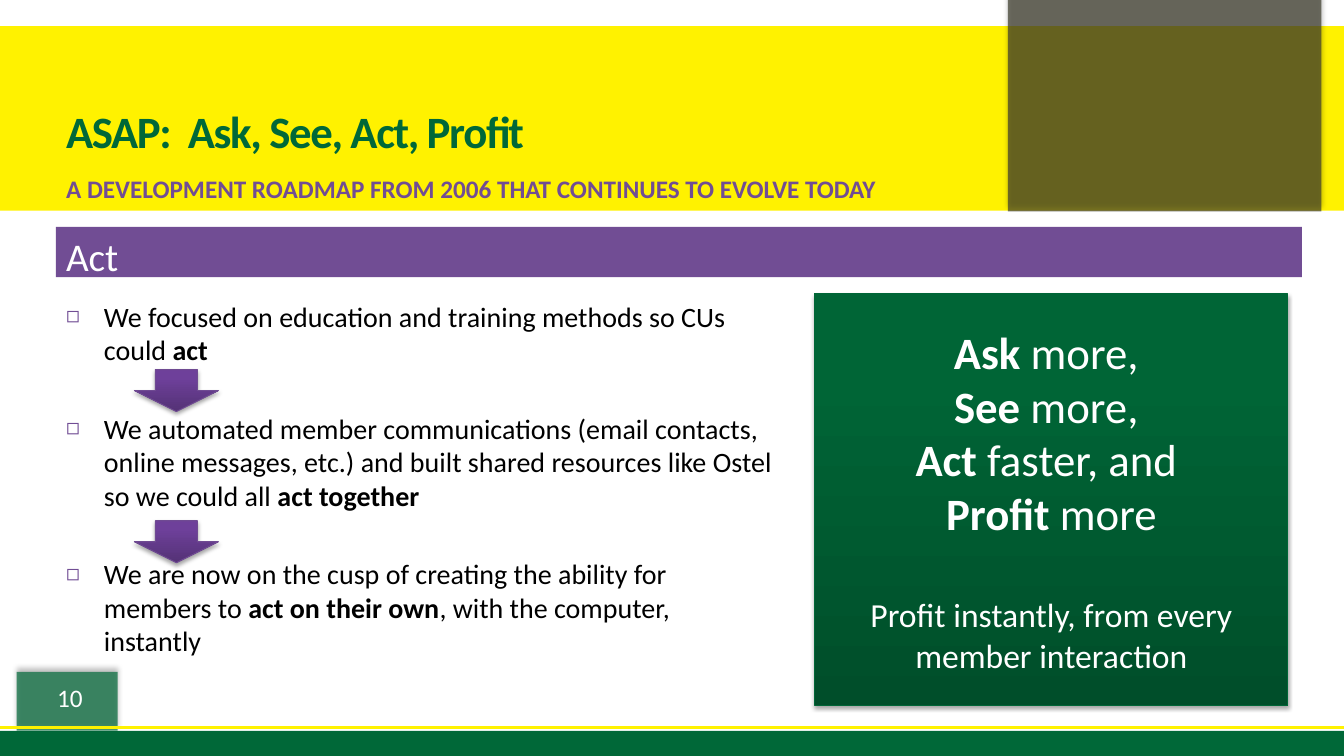
from lxml import etree
from pptx import Presentation
from pptx.dml.color import RGBColor
from pptx.enum.shapes import MSO_CONNECTOR, MSO_SHAPE
from pptx.enum.text import MSO_ANCHOR, MSO_AUTO_SIZE, PP_ALIGN
from pptx.oxml.ns import qn
from pptx.util import Pt

GREEN, YELLOW, PURPLE, WHITE = "006838", "FFF200", "714D94", "FFFFFF"
GREEN_STOPS = [(0, "004E2A"), (80, "006536"), (100, "006537")]
PURPLE_STOPS = [(0, "543276"), (80, "6E409A"), (100, "6E3F9C")]


def rgb(value):
    return RGBColor.from_string(value)


def add_xml(parent, tag, **attrs):
    return etree.SubElement(parent, qn(tag), attrs)


def add_color(parent, color, opacity=None):
    clr = add_xml(parent, "a:srgbClr", val=color)
    if opacity is not None:
        add_xml(clr, "a:alpha", val=str(opacity * 1000))


def add_shadow(s, blur, dist, angle):
    effects = s._element.spPr.find(qn("a:effectLst"))
    shadow = add_xml(effects, "a:outerShdw", blurRad=str(Pt(blur)),
                     dist=str(Pt(dist)), dir=str(angle * 60000),
                     algn="ctr", rotWithShape="0")
    add_color(shadow, "000000", 35)


def add_block(slide, box, color, kind=MSO_SHAPE.RECTANGLE):
    s = slide.shapes.add_shape(kind, *map(Pt, box))
    s.shadow.inherit = False
    s.fill.solid()
    s.fill.fore_color.rgb = rgb(color)
    s.line.fill.background()
    return s


def add_glass(slide, box, color):
    """Translucent block with a soft shadow above it."""
    s = add_block(slide, box, color)
    clr = s._element.spPr.find(qn("a:solidFill"))[0]
    add_xml(clr, "a:alpha", val="70000")
    add_shadow(s, 4, 3, 270)


def add_gradient_block(slide, box, stops, edge, kind=MSO_SHAPE.RECTANGLE):
    s = add_block(slide, box, edge, kind)
    s.line.color.rgb = rgb(edge)
    s.line.width = Pt(0.75)
    spPr = s._element.spPr
    grad = etree.Element(qn("a:gradFill"), rotWithShape="1")
    stop_list = add_xml(grad, "a:gsLst")
    for pos, color in stops:
        add_color(add_xml(stop_list, "a:gs", pos=str(pos * 1000)), color)
    add_xml(grad, "a:lin", ang=str(270 * 60000), scaled="0")
    spPr.replace(spPr.find(qn("a:solidFill")), grad)
    add_shadow(s, 3.1, 1.8, 90)
    return s


def add_rule(slide, y, color, width):
    s = slide.shapes.add_connector(MSO_CONNECTOR.STRAIGHT, 0, Pt(y), Pt(960), Pt(y))
    s.line.color.rgb = rgb(color)
    s.line.width = Pt(width)
    add_xml(s._element.spPr, "a:effectLst")


def place(slide, idx, box, anchor=MSO_ANCHOR.TOP):
    """Move a placeholder to its box, in front of what is drawn so far."""
    s = slide.placeholders[idx]
    s.left, s.top, s.width, s.height = map(Pt, box)
    slide.shapes._spTree.append(s._element)
    tf = s.text_frame
    tf.word_wrap = True
    tf.auto_size = MSO_AUTO_SIZE.NONE
    tf.vertical_anchor = anchor
    return s


def style(r, size, color, bold=False):
    r.font.name = "Calibri"
    r.font.size = Pt(size)
    r.font.bold = bold
    r.font.color.rgb = rgb(color)


def write_line(tf, text, size, color, bold=False, align=PP_ALIGN.LEFT):
    tf.text = text
    p = tf.paragraphs[0]
    p.alignment = align
    p.space_before = Pt(0)
    style(p.runs[0], size, color, bold)
    return p.runs[0]


def write_runs(p, text, size, color):
    """Asterisks switch bold on and off; a newline is a line break."""
    for i, part in enumerate(text.split("*")):
        for j, piece in enumerate(part.split("\n")):
            if j:
                p.add_line_break()
            if piece:
                r = p.add_run()
                r.text = piece
                style(r, size, color, bold=i % 2 == 1)


def write_bullets(tf, items, size, gap):
    for i, item in enumerate(items):
        p = tf.add_paragraph() if i else tf.paragraphs[0]
        pPr = p._p.get_or_add_pPr()
        pPr.set("marL", str(Pt(27)))
        pPr.set("indent", str(-Pt(27)))
        add_color(add_xml(pPr, "a:buClr"), PURPLE)
        add_xml(pPr, "a:buSzPct", val="80000")
        add_xml(pPr, "a:buChar", char="◻")
        p.space_before = Pt(gap if i else 0)
        write_runs(p, item, size, "000000")


def main():
    prs = Presentation()
    prs.slide_width, prs.slide_height = Pt(960), Pt(540)
    slide = prs.slides.add_slide(prs.slide_layouts[4])

    # Frame: footer band, header band, corner block, page number tab
    add_block(slide, (0, 522, 960, 18), GREEN)
    add_block(slide, (0, 18.72, 960, 131.76), YELLOW)
    add_glass(slide, (720, 0, 224, 151), "3E3D2D")
    add_glass(slide, (12, 480, 72, 42), GREEN)
    add_rule(slide, 519.84, YELLOW, 2.25)

    # Headings
    subtitle = place(slide, 3, (40, 120, 864, 30))
    write_line(subtitle.text_frame,
               "A DEVELOPMENT ROADMAP FROM 2006 THAT CONTINUES TO EVOLVE TODAY",
               18, PURPLE, bold=True)
    title = place(slide, 0, (40, 66, 664, 50.4), MSO_ANCHOR.BOTTOM)
    r = write_line(title.text_frame, "ASAP:  Ask, See, Act, Profit", 32, GREEN, bold=True)
    r.font._element.set("spc", "-100")

    # Page number
    number = slide.shapes.add_textbox(Pt(18), Pt(484), Pt(64), Pt(29))
    number.text_frame.word_wrap = True
    write_line(number.text_frame, "10", 18, WHITE, align=PP_ALIGN.CENTER)

    # Steps
    steps = place(slide, 2, (40, 210, 524, 240))
    write_bullets(steps.text_frame, [
        "We focused on education and training methods so CUs could *act*",
        "We automated member communications (email contacts, online messages, etc.) "
        "and built shared resources like Ostel so we could all *act together*",
        "We are now on the cusp of creating the ability for members to "
        "*act on their own*, with the computer, \ninstantly",
    ], 20, 32)

    # Section bar
    bar = place(slide, 1, (40, 162, 890, 36))
    bar.fill.solid()
    bar.fill.fore_color.rgb = rgb(PURPLE)
    write_line(bar.text_frame, "Act", 28, WHITE)

    # Slogan panel
    panel = add_gradient_block(slide, (582, 210, 338, 294), GREEN_STOPS, "006637")
    tf = panel.text_frame
    tf.word_wrap = True
    tf.vertical_anchor = MSO_ANCHOR.MIDDLE
    slogan, promise = tf.paragraphs[0], tf.add_paragraph()
    slogan.alignment = promise.alignment = PP_ALIGN.CENTER
    promise.space_before = Pt(39)
    write_runs(slogan, "*Ask* more, \n*See* more, \n*Act* faster, and \n*Profit* more", 32, WHITE)
    write_runs(promise, "Profit instantly, from every member interaction", 24, WHITE)

    # Arrows between the steps
    for y in (264, 372):
        add_gradient_block(slide, (96, y, 60, 30), PURPLE_STOPS, "6F4A92",
                           MSO_SHAPE.DOWN_ARROW)

    # Unused placeholder
    spare = slide.placeholders[4]._element
    spare.getparent().remove(spare)

    prs.save("out.pptx")


if __name__ == "__main__":
    main()
